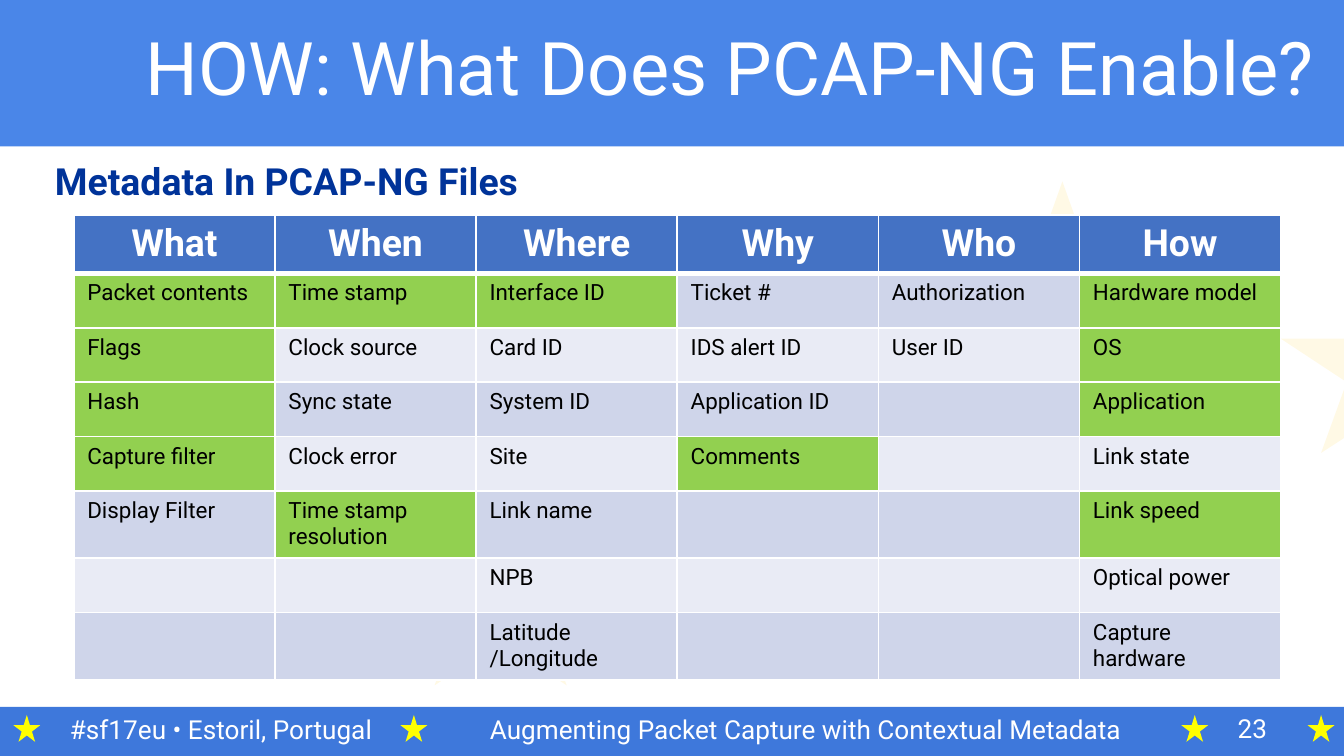
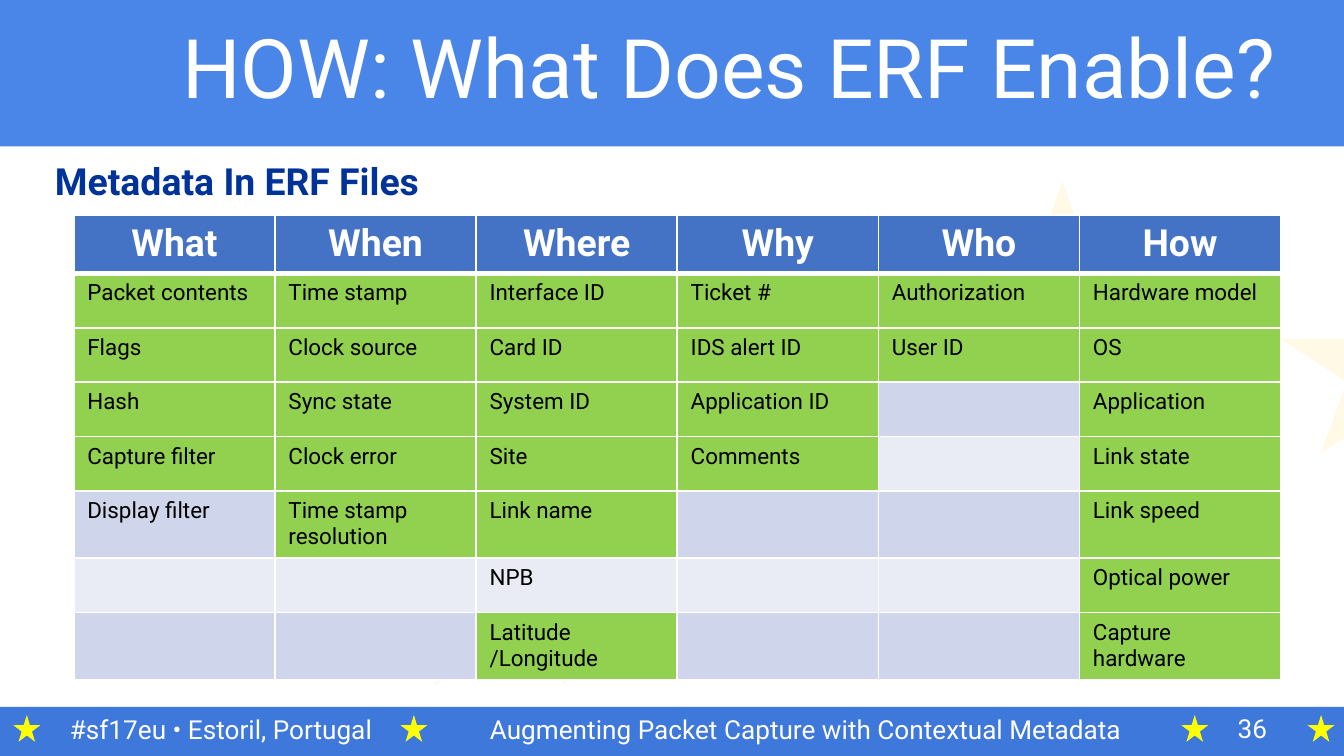
import lxml.etree
import pptx
import pptx.dml.color
import pptx.enum.shapes
import pptx.enum.text
import pptx.oxml.ns
import pptx.util

Inches = pptx.util.Inches
Pt = pptx.util.Pt
qn = pptx.oxml.ns.qn
SHAPE = pptx.enum.shapes.MSO_SHAPE
ALIGN = pptx.enum.text.PP_ALIGN
ANCHOR = pptx.enum.text.MSO_ANCHOR

WIDTH = 10
HEIGHT = WIDTH * 9 / 16
FONT = "Roboto"
COLORS = {
    "banner": "4A86E8",
    "footer": "3E78DB",
    "star": "FFFF00",
    "watermark": "FFCC01",
    "heading": "003399",
    "header": "4472C4",
    "enabled": "92D050",
    "odd": "CFD5EA",
    "even": "E9EBF5",
    "white": "FFFFFF",
    "black": "000000",
}

HEADERS = ["What", "When", "Where", "Why", "Who", "How"]
METADATA = [
    ["Packet contents", "Time stamp", "Interface ID", "Ticket #", "Authorization", "Hardware model"],
    ["Flags", "Clock source", "Card ID", "IDS alert ID", "User ID", "OS"],
    ["Hash", "Sync state", "System ID", "Application ID", "", "Application"],
    ["Capture filter", "Clock error", "Site", "Comments", "", "Link state"],
    ["Display filter", "Time stamp resolution", "Link name", "", "", "Link speed"],
    ["", "", "NPB", "", "", "Optical power"],
    ["", "", "Latitude /Longitude", "", "", "Capture hardware"],
]

SLIDES = [
    {
        "title": "HOW: What Does PCAP-NG Enable?",
        "title_size": 39.6,
        "heading": "Metadata In PCAP-NG Files",
        "number": "23",
        "labels": {"Display filter": "Display Filter"},
        "enabled": ["111001", "100001", "100001", "100100", "010001", "000000", "000000"],
    },
    {
        "title": "HOW: What Does ERF Enable?",
        "title_size": 44,
        "heading": "Metadata In ERF Files",
        "number": "36",
        "labels": {},
        "enabled": ["111111", "111111", "111101", "111101", "011001", "000001", "001001"],
    },
]


def rgb(name):
    """Return the palette colour of that name."""
    return pptx.dml.color.RGBColor.from_string(COLORS[name])


def paint(sp, color, opacity=100):
    """Give a shape a plain fill without line or shadow."""
    sp.shadow.inherit = False
    sp.line.fill.background()
    sp.fill.solid()
    sp.fill.fore_color.rgb = rgb(color)
    if opacity < 100:
        clr = sp._element.spPr.find(qn("a:solidFill")).find(qn("a:srgbClr"))
        lxml.etree.SubElement(clr, qn("a:alpha"), val=str(opacity * 1000))


def add_block(s, kind, box, color, opacity=100):
    """Add a filled preset shape in a box of inches."""
    sp = s.shapes.add_shape(kind, *map(Inches, box))
    paint(sp, color, opacity)


def write(tf, text, size, color, bold=False, align=ALIGN.LEFT):
    """Write one run into the first paragraph of a text frame."""
    p = tf.paragraphs[0]
    p.alignment = align
    r = p.add_run()
    r.text = text
    r.font.name = FONT
    r.font.size = Pt(size)
    r.font.bold = bold
    r.font.color.rgb = rgb(color)


def add_label(s, box, text, size, color, bold=False, align=ALIGN.LEFT):
    """Add a wrapping text box and return its frame."""
    tf = s.shapes.add_textbox(*map(Inches, box)).text_frame
    tf.word_wrap = True
    write(tf, text, size, color, bold, align)
    return tf


def add_background_stars(s, box):
    """Draw the pale stars, the last one cut by the right edge."""
    left, top, _, _ = box
    for dx, dy in [(0, 2.37), (1.75, 0.64), (4.18, 0)]:
        add_block(s, SHAPE.STAR_5_POINT, (left + dx, top + dy, 1.59, 1.38), "watermark", 10)
    fb = s.shapes.build_freeform(47, 38, scale=Inches(0.01))
    fb.add_line_segments([(47, 74), (30, 85)])
    fb.move_to(0, 0)
    fb.add_line_segments([(47, 0), (47, 31)])
    paint(fb.convert_to_shape(Inches(left + 6.6), Inches(top + 1.17)), "watermark", 10)


def add_banner(s, box, title, size):
    """Add the top band with its title."""
    left, top, width, height = box
    add_block(s, SHAPE.RECTANGLE, box, "banner")
    tf = add_label(s, (left + 0.85, top, width - 0.85, height - 0.02), title, size, "white", align=ALIGN.CENTER)
    tf.vertical_anchor = ANCHOR.MIDDLE
    tf.paragraphs[0].line_spacing = 0.9


def add_footer(s, box, number):
    """Add the bottom band with event, talk, page number and stars."""
    left, top, _, _ = box
    add_block(s, SHAPE.RECTANGLE, box, "footer")
    for dx in (0.1, 2.98, 8.79, 9.73):
        add_block(s, SHAPE.STAR_5_POINT, (left + dx, top + 0.06, 0.2, 0.2), "star")
    labels = [
        (0.39, 0, 2.51, 0.39, "#sf17eu • Estoril, Portugal", ALIGN.CENTER),
        (3.28, 0, 5.43, 0.34, "Augmenting Packet Capture with Contextual Metadata", ALIGN.CENTER),
        (9.11, -0.01, 0.49, 0.34, number, ALIGN.LEFT),
    ]
    for dx, dy, width, height, text, align in labels:
        add_label(s, (left + dx, top + dy, width, height), text, 14, "white", align=align)


def set_borders(cell, top, bottom):
    """Draw white borders round a cell, with widths in points."""
    tcPr = cell._tc.get_or_add_tcPr()
    for side, width in {"L": 1, "R": 1, "T": top, "B": bottom}.items():
        ln = lxml.etree.SubElement(tcPr, qn(f"a:ln{side}"), w=str(Pt(width)))
        fill = lxml.etree.SubElement(ln, qn("a:solidFill"))
        lxml.etree.SubElement(fill, qn("a:srgbClr"), val=COLORS["white"])


def add_metadata_table(s, box, labels, enabled):
    """Add the metadata grid, marking the enabled items in green."""
    _, _, width, height = box
    rows = [HEADERS] + METADATA
    table = s.shapes.add_table(len(rows), len(HEADERS), *map(Inches, box)).table
    for column in table.columns:
        column.width = Inches(width / len(HEADERS))
    for i, texts in enumerate(rows):
        table.rows[i].height = Inches(height / len(rows))
        for j, text in enumerate(texts):
            cell = table.cell(i, j)
            set_borders(cell, 3 if i == 1 else 1, 3 if i == 0 else 1)
            if i == 0:
                color = "header"
                write(cell.text_frame, text, 20, "white", True, ALIGN.CENTER)
            else:
                band = "odd" if i % 2 else "even"
                color = "enabled" if enabled[i - 1][j] == "1" else band
                if text:
                    write(cell.text_frame, labels.get(text, text), 12, "black")
            cell.fill.solid()
            cell.fill.fore_color.rgb = rgb(color)


def add_metadata_slide(prs, content):
    """Build one slide that shows what a file format enables."""
    s = prs.slides.add_slide(prs.slide_layouts[6])
    add_background_stars(s, (2.93, 1.35, 7.07, 3.75))
    add_banner(s, (0, 0, 10.01, 1.09), content["title"], content["title_size"])
    add_footer(s, (0, 5.26, WIDTH, 0.39), content["number"])
    add_label(s, (0.31, 1.13, 9.45, 0.44), content["heading"], 20, "heading", True)
    add_metadata_table(s, (0.55, 1.6, 8.98, 3.24), content["labels"], content["enabled"])


def main():
    """Build and save the presentation."""
    prs = pptx.Presentation()
    prs.slide_width = Inches(WIDTH)
    prs.slide_height = Inches(HEIGHT)
    for content in SLIDES:
        add_metadata_slide(prs, content)
    prs.save("out.pptx")


if __name__ == "__main__":
    main()
